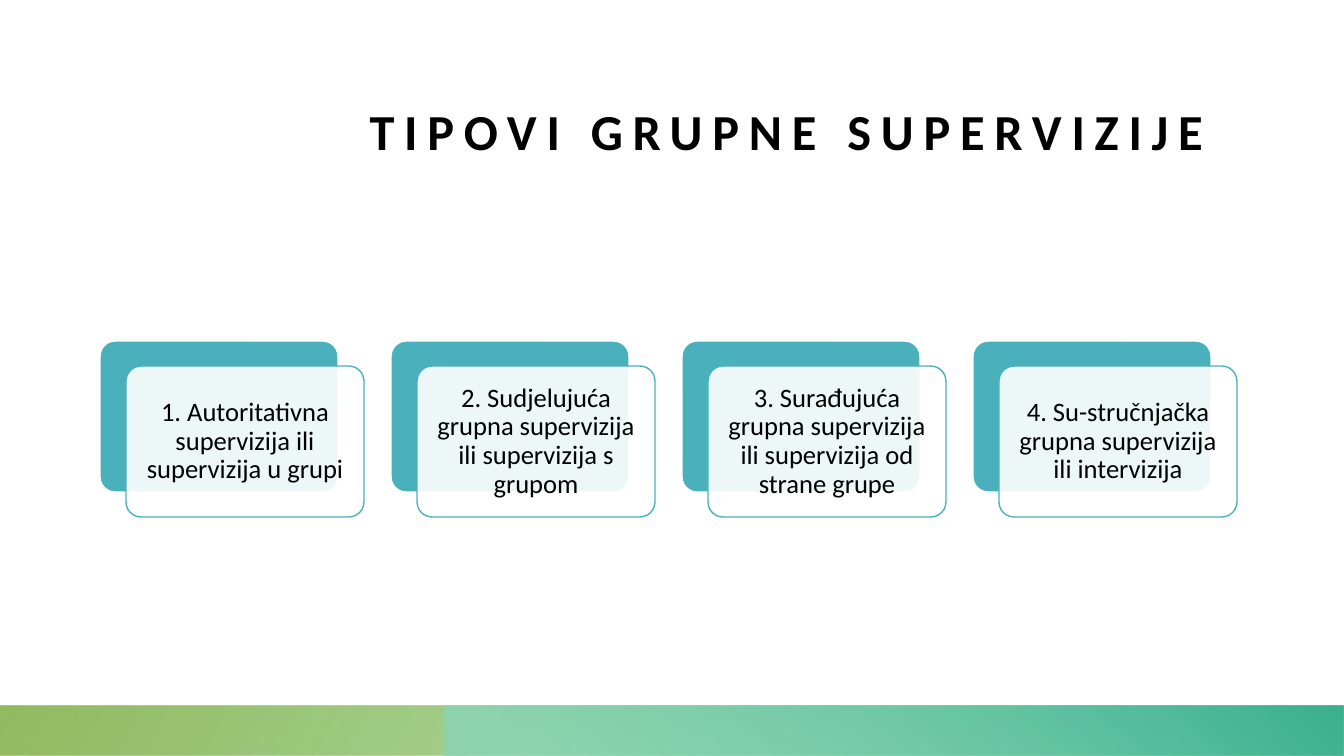
from pptx import Presentation
from pptx.dml.color import RGBColor
from pptx.enum.shapes import MSO_SHAPE
from pptx.enum.text import MSO_ANCHOR, PP_ALIGN
from pptx.util import Pt
from lxml import etree

RECT, ROUNDED = MSO_SHAPE.RECTANGLE, MSO_SHAPE.ROUNDED_RECTANGLE
BOTTOM, MIDDLE = MSO_ANCHOR.BOTTOM, MSO_ANCHOR.MIDDLE
RIGHT, CENTER = PP_ALIGN.RIGHT, PP_ALIGN.CENTER
EMU_PER_PX = 914400 / 100.8
DRAWING = "{http://schemas.openxmlformats.org/drawingml/2006/main}"
TEAL, WHITE, BLACK = "4AB0BC", "FFFFFF", "000000"


def px(*lengths):
    return [round(length * EMU_PER_PX) for length in lengths]


def rgb(value):
    return RGBColor.from_string(value)


prs = Presentation()
prs.slide_width, prs.slide_height = px(1344, 756)
slide = prs.slides.add_slide(prs.slide_layouts[6])
shapes = slide.shapes

title = shapes.add_textbox(*px(151, 50, 1053, 111))
title_frame = title.text_frame
title_format = {"word_wrap": True, "vertical_anchor": BOTTOM, "margin_left": 0,
                "margin_top": 0, "margin_right": 0, "margin_bottom": 0}
for name, value in title_format.items():
    setattr(title_frame, name, value)
heading = title_frame.paragraphs[0]
heading.alignment = RIGHT
heading_run = heading.add_run()
heading_run.text = "TIPOVI GRUPNE SUPERVIZIJE"
for name, value in {"name": "Calibri", "size": Pt(36), "bold": True}.items():
    setattr(heading_run.font, name, value)
heading_run.font.color.rgb = rgb(BLACK)
heading_run.font._element.set("spc", "700")

footer_bars = [
    (0, 1344, 150, [(0.14, "4CB13B", 28), (1, "80AF45", 85)]),
    (445, 899, 50, [(0.09, "84D6BD", 68), (0.99, "3BB18D", 100)]),
]
for left, width, angle, stops in footer_bars:
    bar = shapes.add_shape(RECT, *px(left, 706, width, 50))
    bar.shadow.inherit = False
    bar.line.fill.background()
    bar.fill.gradient()
    bar.fill.gradient_angle = angle
    for stop, (position, color, _) in zip(bar.fill.gradient_stops, stops):
        stop.position = position
        stop.color.rgb = rgb(color)
    tints = bar.element.spPr.iter(DRAWING + "srgbClr")
    for tint, (_, _, opacity) in zip(tints, stops):
        etree.SubElement(tint, DRAWING + "alpha", val=str(opacity * 1000))

supervision_types = [
    "1. Autoritativna supervizija ili supervizija u grupi",
    "2. Sudjelujuća grupna supervizija ili supervizija s grupom",
    "3. Surađujuća grupna supervizija ili supervizija od strane grupe",
    "4. Su-stručnjačka grupna supervizija ili intervizija",
]
inset, = px(8)
card_format = {"word_wrap": True, "vertical_anchor": MIDDLE, "margin_left": inset,
               "margin_top": inset, "margin_right": inset, "margin_bottom": inset}
for index, wording in enumerate(supervision_types):
    left = 100 + index * 291
    for x, y, fill, outline in [(left, 341, TEAL, WHITE), (left + 26, 366, WHITE, TEAL)]:
        card = shapes.add_shape(ROUNDED, *px(x, y, 238, 151))
        card.shadow.inherit = False
        card.adjustments[0] = 0.1
        card.fill.solid()
        card.fill.fore_color.rgb = rgb(fill)
        card.line.color.rgb = rgb(outline)
        card.line.width = Pt(1)
    card_tint = next(card.element.spPr.iter(DRAWING + "srgbClr"))
    etree.SubElement(card_tint, DRAWING + "alpha", val="90000")
    for name, value in card_format.items():
        setattr(card.text_frame, name, value)
    label = card.text_frame.paragraphs[0]
    label.alignment = CENTER
    label.line_spacing = 0.9
    label_run = label.add_run()
    label_run.text = wording
    label_run.font.name = "Calibri"
    label_run.font.size = Pt(19)
    label_run.font.color.rgb = rgb(BLACK)

prs.save("out.pptx")
